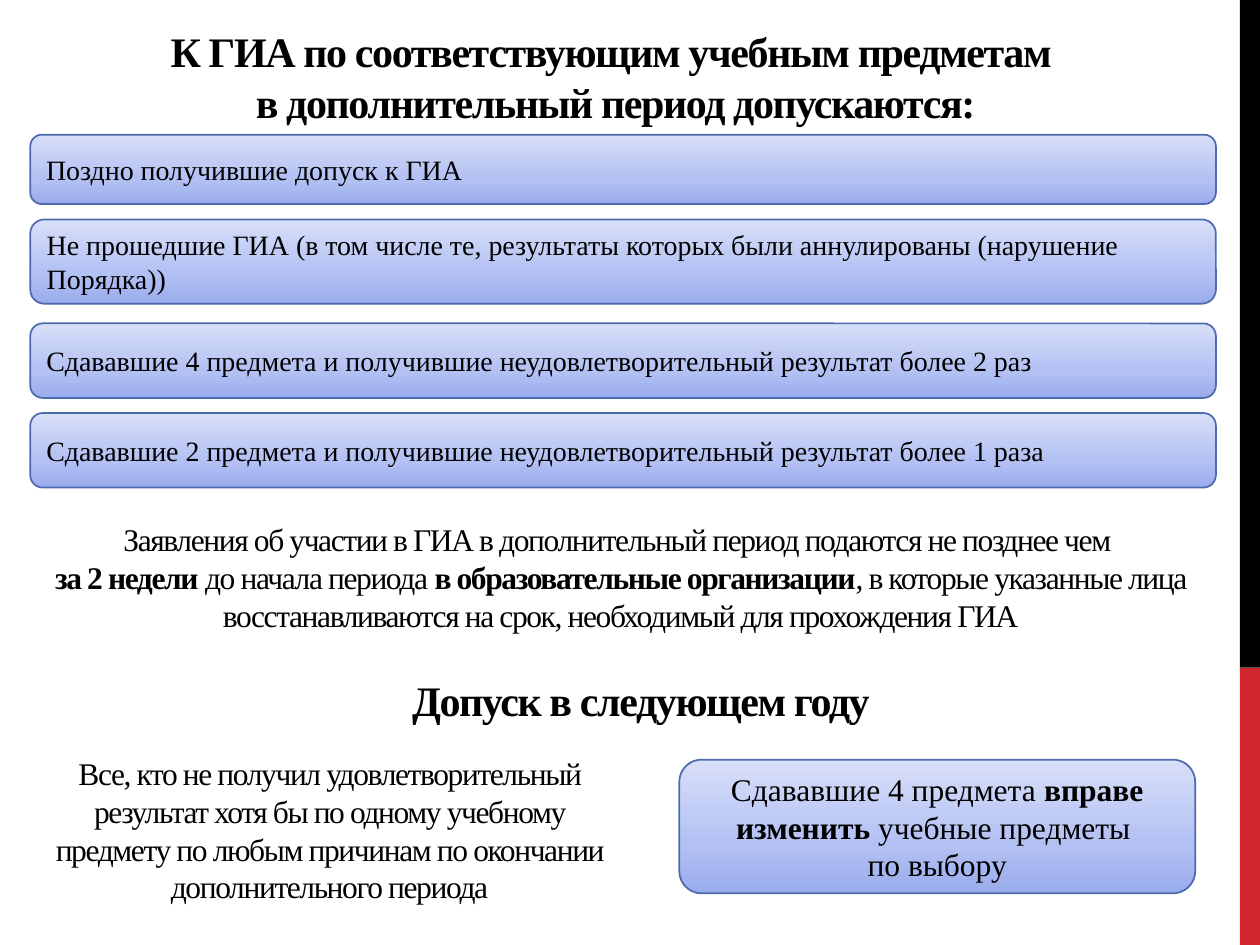
from copy import deepcopy

from pptx import Presentation
from pptx.dml.color import RGBColor
from pptx.enum.shapes import MSO_SHAPE
from pptx.enum.text import MSO_ANCHOR, PP_ALIGN
from pptx.util import Pt

BLACK = RGBColor(0x00, 0x00, 0x00)
RED = RGBColor(0xD1, 0x28, 0x2E)
BORDER = RGBColor(0x4E, 0x6A, 0xAE)
BLUE_STOPS = [
    (0, RGBColor(0x9A, 0xAC, 0xED)),
    (0.35, RGBColor(0xB2, 0xC0, 0xF3)),
    (1, RGBColor(0xD8, 0xDF, 0xF9)),
]
FONT = "Times New Roman"
TIGHT = -80  # letter spacing in hundredths of a point

SLIDE_WIDTH, SLIDE_HEIGHT = 720, 540
STRIPE_WIDTH, BLACK_HEIGHT = 11.5, 381.6

CATEGORIES = [  # top, height, wording
    (77, 39.6, "Поздно получившие допуск к ГИА"),
    (125.4, 48.2, "Не прошедшие ГИА (в том числе те, результаты которых были "
                  "аннулированы (нарушение Порядка))"),
    (184.8, 42.6, "Сдававшие 4 предмета и получившие неудовлетворительный "
                  "результат более 2 раз"),
    (236, 42.6, "Сдававшие 2 предмета и получившие неудовлетворительный "
                "результат более 1 раза"),
]


def write(shape, lines, size, align=PP_ALIGN.CENTER, spacing=0):
    """Fill the shape with lines, each a list of (wording, bold) runs."""
    frame = shape.text_frame
    frame.word_wrap = True
    frame.vertical_anchor = MSO_ANCHOR.MIDDLE
    paragraph = frame.paragraphs[0]
    paragraph.alignment = align
    for number, line in enumerate(lines):
        if number:
            paragraph.add_line_break()
        for wording, bold in line:
            run = paragraph.add_run()
            run.text = wording
            run.font.name = FONT
            run.font.size = Pt(size)
            run.font.bold = bold
            run.font.color.rgb = BLACK
            if spacing:
                run.font._element.set("spc", str(spacing))


def add_text(slide, box, lines, size):
    textbox = slide.shapes.add_textbox(*map(Pt, box))
    write(textbox, lines, size, spacing=TIGHT)


def add_panel(slide, box, lines, size, align=PP_ALIGN.CENTER):
    panel = slide.shapes.add_shape(MSO_SHAPE.ROUNDED_RECTANGLE, *map(Pt, box))
    panel.shadow.inherit = False
    panel.line.color.rgb = BORDER
    panel.line.width = Pt(1)
    panel.fill.gradient()
    panel.fill.gradient_angle = 90
    first = panel.fill.gradient_stops[0]._gs
    first.addnext(deepcopy(first))
    for stop, (position, color) in zip(panel.fill.gradient_stops, BLUE_STOPS):
        stop.position = position
        stop.color.rgb = color
    write(panel, lines, size, align)


def add_side_stripe(slide, left, width, height):
    for top, bottom, color in [(BLACK_HEIGHT, height, RED), (0, BLACK_HEIGHT, BLACK)]:
        band = slide.shapes.add_shape(
            MSO_SHAPE.RECTANGLE, Pt(left), Pt(top), Pt(width), Pt(bottom - top))
        band.shadow.inherit = False
        band.fill.solid()
        band.fill.fore_color.rgb = color
        band.line.fill.background()


def add_extra_period(slide, left, top, width):
    add_text(slide, (left - 8.6, top + 15.1, width + 8.6, 56.9), [
        [("К ГИА по соответствующим учебным предметам ", True)],
        [("в дополнительный период допускаются:", True)],
    ], 24)
    for offset, height, wording in CATEGORIES:
        add_panel(slide, (left, top + offset, width, height),
                  [[(wording, False)]], 16, PP_ALIGN.LEFT)
    add_text(slide, (left - 2.9, top + 287.3, width + 2.9, 85), [
        [("Заявления об участии в ГИА в дополнительный период подаются "
          "не позднее чем ", False)],
        [("за 2 недели", True), (" до начала периода ", False),
         ("в образовательные организации", True),
         (", в которые указанные лица восстанавливаются на срок, "
          "необходимый для прохождения ГИА", False)],
    ], 18)


def add_next_year(slide, left, top):
    add_text(slide, (left + 5.8, top, 680.4, 33.8),
             [[("Допуск в следующем году", True)]], 24)
    add_text(slide, (left, top + 34.6, 336.2, 113), [
        [("Все, кто не получил удовлетворительный результат хотя бы по одному "
          "учебному предмету по любым причинам по окончании "
          "дополнительного периода", False)],
    ], 18)
    add_panel(slide, (left + 368, top + 51.1, 294.8, 76.4), [
        [("Сдававшие 4 предмета ", False), ("вправе изменить", True),
         (" учебные предметы ", False)],
        [("по выбору", False)],
    ], 18)


def main():
    prs = Presentation()
    prs.slide_width, prs.slide_height = Pt(SLIDE_WIDTH), Pt(SLIDE_HEIGHT)
    slide = prs.slides.add_slide(prs.slide_layouts[6])
    add_side_stripe(slide, SLIDE_WIDTH - STRIPE_WIDTH, STRIPE_WIDTH, SLIDE_HEIGHT)
    add_extra_period(slide, 17.3, 0, 677.5)
    add_next_year(slide, 20.2, 383)
    prs.save("out.pptx")


if __name__ == "__main__":
    main()
